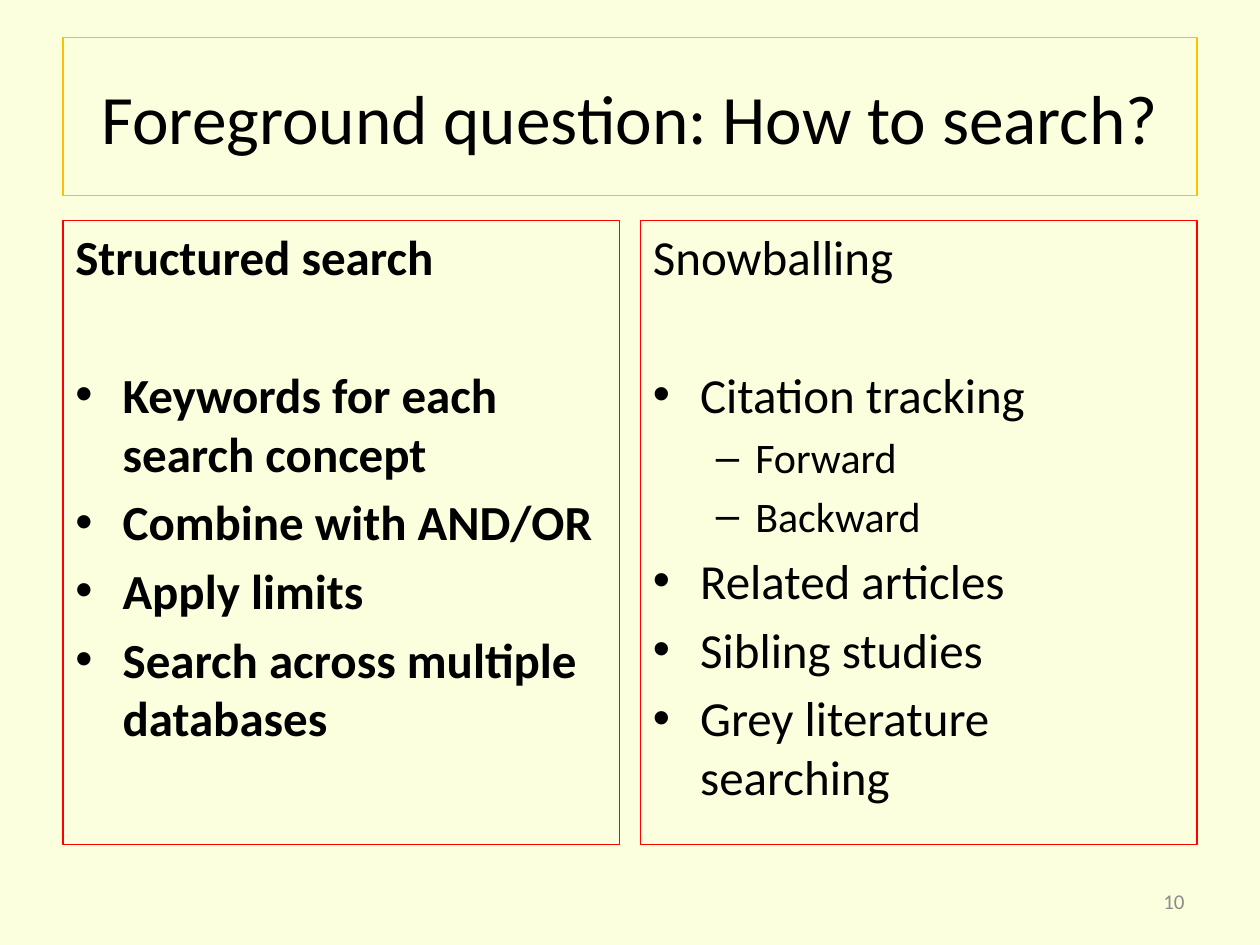
from lxml.etree import SubElement
from pptx import Presentation
from pptx.dml.color import RGBColor
from pptx.enum.shapes import MSO_SHAPE
from pptx.enum.text import MSO_ANCHOR, PP_ALIGN
from pptx.oxml.ns import qn
from pptx.util import Pt

COLORS = {
    "background": "FBFFDD",
    "title_line": "FFC000",
    "column_line": "FF0000",
    "text": "000000",
    "number": "8C8C8C",
}
FONT = "Calibri"
MARGIN = 36
COLUMN_TOP, COLUMN_WIDTH, COLUMN_HEIGHT, COLUMN_GAP = 126, 318, 356.4, 12
HEADING_GAP = 45

# Per level: bullet, text size, left margin, hanging indent
LEVELS = [("•", 28, 27, 27), ("–", 24, 58.5, 22.5)]

COLUMNS = [
    ("Structured search", True, [
        (0, "Keywords for each search concept"),
        (0, "Combine with AND/OR"),
        (0, "Apply limits"),
        (0, "Search across multiple databases"),
    ]),
    ("Snowballing", False, [
        (0, "Citation tracking"),
        (1, "Forward"),
        (1, "Backward"),
        (0, "Related articles"),
        (0, "Sibling studies"),
        (0, "Grey literature searching"),
    ]),
]


def color(name):
    return RGBColor.from_string(COLORS[name])


def set_text(para, text, size, color_name="text", bold=False, align=PP_ALIGN.LEFT):
    para.text = text
    para.alignment = align
    for span in para.runs:
        span.font.name = FONT
        span.font.size = Pt(size)
        span.font.bold = bold
        span.font.color.rgb = color(color_name)


def add_frame(page, left, top, width, height, line_name, anchor):
    """Add an unfilled outlined rectangle and return its text frame."""
    box = page.shapes.add_shape(
        MSO_SHAPE.RECTANGLE, Pt(left), Pt(top), Pt(width), Pt(height))
    box.shadow.inherit = False
    box.fill.background()
    box.line.color.rgb = color(line_name)
    box.line.width = Pt(0.75)
    box.text_frame.word_wrap = True
    box.text_frame.vertical_anchor = anchor
    return box.text_frame


def add_bullet(frame, level, text, bold):
    mark, size, margin, hanging = LEVELS[level]
    para = frame.add_paragraph()
    set_text(para, text, size, bold=bold)
    para.level = level
    para.space_before = Pt(size * 0.2)
    properties = para._p.get_or_add_pPr()
    properties.set("marL", str(Pt(margin)))
    properties.set("indent", str(-Pt(hanging)))
    SubElement(properties, qn("a:buFont"), typeface="Arial")
    SubElement(properties, qn("a:buChar"), char=mark)
    return para


def add_column(page, left, heading, bold, items):
    frame = add_frame(page, left, COLUMN_TOP, COLUMN_WIDTH, COLUMN_HEIGHT,
                      "column_line", MSO_ANCHOR.TOP)
    set_text(frame.paragraphs[0], heading, 28, bold=bold)
    bullets = [add_bullet(frame, level, text, bold) for level, text in items]
    bullets[0].space_before = Pt(HEADING_GAP)


def add_title(page, text):
    frame = add_frame(page, MARGIN, 21.6, 648, 90, "title_line", MSO_ANCHOR.MIDDLE)
    set_text(frame.paragraphs[0], text, 39.6, align=PP_ALIGN.CENTER)


def add_page_number(page, number):
    box = page.shapes.add_textbox(Pt(516), Pt(500.5), Pt(168), Pt(28.75))
    frame = box.text_frame
    frame.word_wrap = True
    frame.vertical_anchor = MSO_ANCHOR.MIDDLE
    set_text(frame.paragraphs[0], number, 12, "number", align=PP_ALIGN.RIGHT)


def main():
    deck = Presentation()
    deck.slide_width, deck.slide_height = Pt(720), Pt(540)
    page = deck.slides.add_slide(deck.slide_layouts[6])
    page.background.fill.solid()
    page.background.fill.fore_color.rgb = color("background")

    add_title(page, "Foreground question: How to search?")
    for index, (heading, bold, items) in enumerate(COLUMNS):
        left = MARGIN + index * (COLUMN_WIDTH + COLUMN_GAP)
        add_column(page, left, heading, bold, items)
    add_page_number(page, "10")
    deck.save("out.pptx")


if __name__ == "__main__":
    main()
